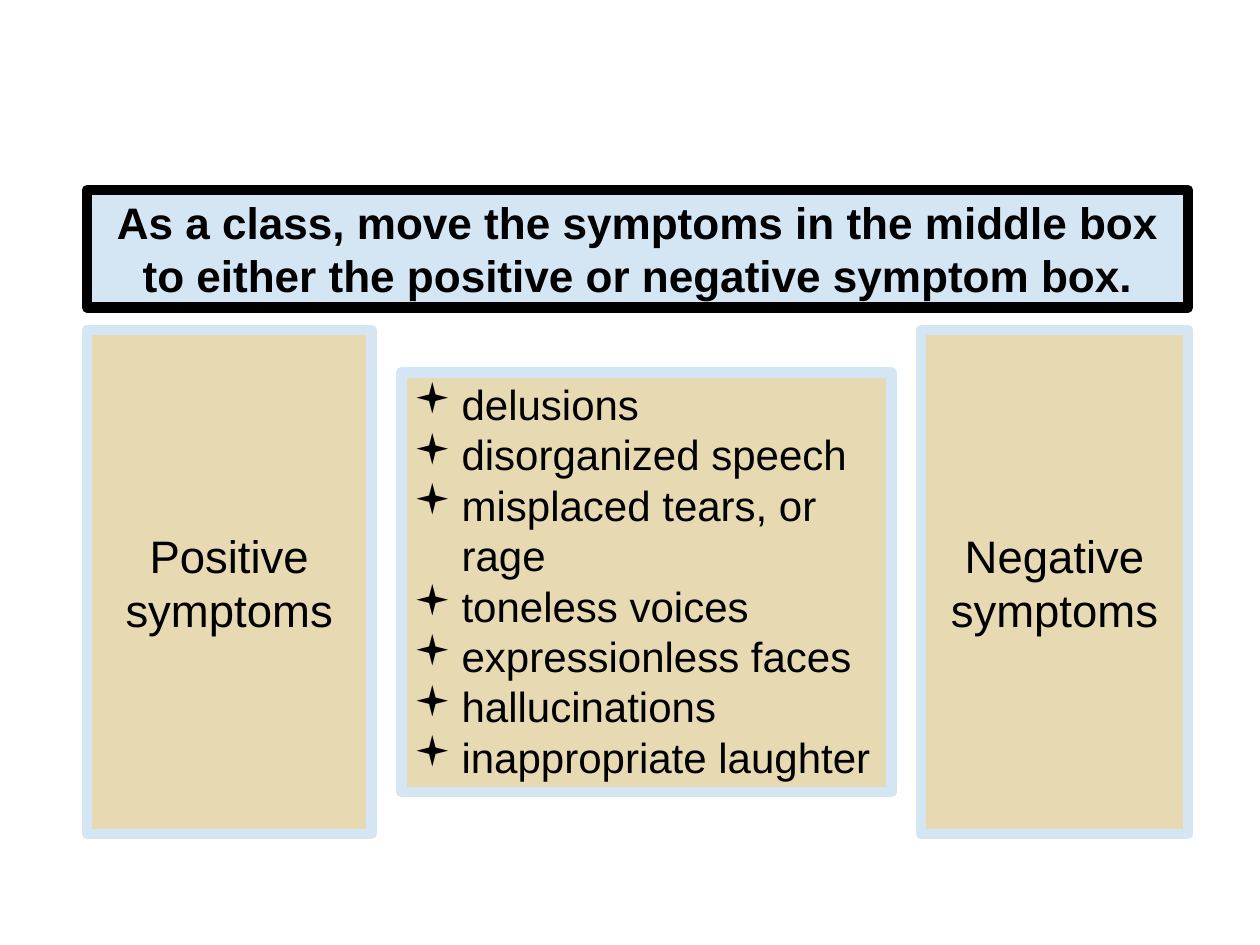
from lxml import etree
from pptx import Presentation
from pptx.dml.color import RGBColor
from pptx.enum.shapes import MSO_SHAPE
from pptx.enum.text import MSO_ANCHOR, MSO_AUTO_SIZE, PP_ALIGN
from pptx.oxml.ns import qn
from pptx.util import Inches, Pt

RECT = MSO_SHAPE.RECTANGLE
MIDDLE, TOP = MSO_ANCHOR.MIDDLE, MSO_ANCHOR.TOP
CENTER, LEFT = PP_ALIGN.CENTER, PP_ALIGN.LEFT
NO_AUTOFIT = MSO_AUTO_SIZE.NONE

COLORS = {"sky": "D4E5F4", "sand": "E7D9B1", "black": "000000"}
TITLE = "As a class, move the symptoms in the middle box to either the positive or negative symptom box."
POSITIVE = "Positive symptoms"
NEGATIVE = "Negative symptoms"
SYMPTOMS = [
    "delusions",
    "disorganized speech",
    "misplaced tears, or rage",
    "toneless voices",
    "expressionless faces",
    "hallucinations",
    "inappropriate laughter",
]

SLIDE_W, SLIDE_H = 10, 7.5
MARGIN, CONTENT_W = 0.69, 8.74
TITLE_TOP, TITLE_H = 1.51, 0.93
ROW_TOP, ROW_H = 2.62, 4
POSITIVE_W, LIST_W, NEGATIVE_W = 2.26, 3.89, 2.12
LIST_H = 3.33
GAP = (CONTENT_W - POSITIVE_W - LIST_W - NEGATIVE_W) / 2
INDENT = 0.38


def color(name):
    return RGBColor.from_string(COLORS[name])


def style_box(sp, box, fill, line):
    sp.left, sp.top, sp.width, sp.height = map(Inches, box)
    sp.fill.solid()
    sp.fill.fore_color.rgb = color(fill)
    sp.line.color.rgb = color(line)
    sp.line.width = Pt(6)
    etree.SubElement(sp.line._get_or_add_ln(), qn("a:round"))


def write(sp, lines, size, align=CENTER, anchor=MIDDLE, bold=False):
    tf = sp.text_frame
    tf.text = "\n".join(lines)
    tf.word_wrap = True
    tf.auto_size = NO_AUTOFIT
    tf.vertical_anchor = anchor
    for p in tf.paragraphs:
        p.alignment = align
        p.line_spacing = 1.0
        p.space_before = p.space_after = Pt(0)
        p.font.name = "Arial"
        p.font.size = Pt(size)
        p.font.bold = bold
        p.font.color.rgb = color("black")


def add_bullets(sp):
    for p in sp.text_frame.paragraphs:
        pPr = p._p.get_or_add_pPr()
        pPr.set("marL", str(Inches(INDENT)))
        pPr.set("indent", str(-Inches(INDENT)))
        run_style = pPr.find(qn("a:defRPr"))
        run_style.addprevious(etree.Element(qn("a:buFont"), typeface="Wingdings"))
        run_style.addprevious(etree.Element(qn("a:buChar"), char="▪"))


def add_box(slide, box):
    sp = slide.shapes.add_shape(RECT, *map(Inches, box))
    sp.shadow.inherit = False
    style_box(sp, box, "sand", "sky")
    return sp


def main():
    prs = Presentation()
    prs.slide_width, prs.slide_height = Inches(SLIDE_W), Inches(SLIDE_H)
    slide = prs.slides.add_slide(prs.slide_layouts[5])

    title = slide.shapes.title
    style_box(title, (MARGIN, TITLE_TOP, CONTENT_W, TITLE_H), "sky", "black")
    write(title, [TITLE], 25.2, bold=True)

    list_left = MARGIN + POSITIVE_W + GAP
    negative_left = list_left + LIST_W + GAP
    list_top = ROW_TOP + (ROW_H - LIST_H) / 2

    positive = add_box(slide, (MARGIN, ROW_TOP, POSITIVE_W, ROW_H))
    write(positive, [POSITIVE], 26)

    symptoms = add_box(slide, (list_left, list_top, LIST_W, LIST_H))
    write(symptoms, SYMPTOMS, 24, LEFT, TOP)
    add_bullets(symptoms)

    negative = add_box(slide, (negative_left, ROW_TOP, NEGATIVE_W, ROW_H))
    write(negative, [NEGATIVE], 26)

    prs.save("out.pptx")


if __name__ == "__main__":
    main()
